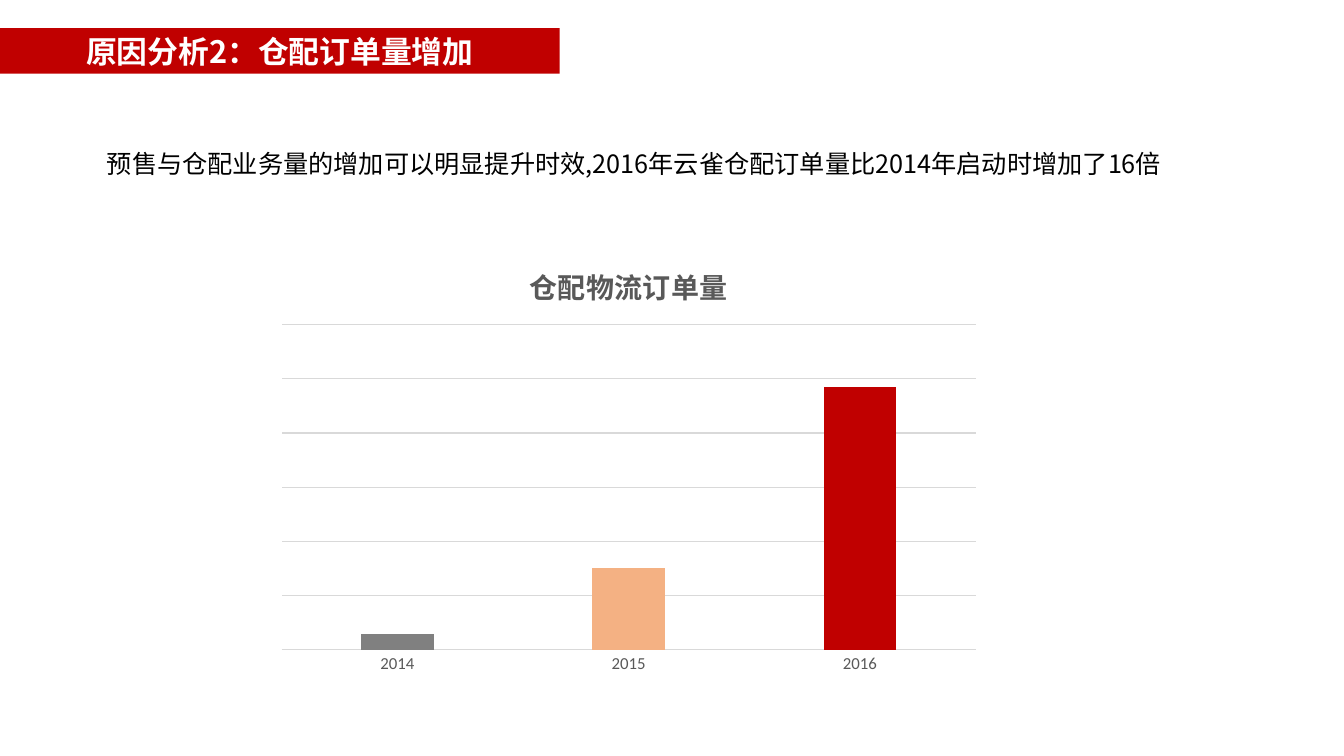
from pptx import Presentation
from pptx.chart.data import CategoryChartData
from pptx.dml.color import RGBColor
from pptx.enum.chart import XL_CHART_TYPE, XL_TICK_MARK
from pptx.enum.shapes import MSO_SHAPE
from pptx.enum.text import MSO_ANCHOR, PP_ALIGN
from pptx.oxml.ns import qn
from pptx.util import Pt

COLUMN = XL_CHART_TYPE.COLUMN_CLUSTERED
NO_TICK = XL_TICK_MARK.NONE
RECT = MSO_SHAPE.RECTANGLE
ROUND_RECT = MSO_SHAPE.ROUNDED_RECTANGLE
MIDDLE = MSO_ANCHOR.MIDDLE
LEFT, CENTER = PP_ALIGN.LEFT, PP_ALIGN.CENTER
PX = 9144


def rgb(value):
    return RGBColor.from_string(value)


class SlideBuilder:
    CJK = "Noto Sans CJK SC"
    LATIN = "Calibri"
    RED = "C00000"
    GRAY = "595959"
    GRID = "D9D9D9"

    def __init__(self, prs):
        self.s = prs.slides.add_slide(prs.slide_layouts[6])

    def box(self, x, y, w, h):
        return [v * PX for v in (x, y, w, h)]

    def font(self, font, size, color, name, bold=False):
        font.size = Pt(size)
        font.bold = bold
        font.name = name
        font.color.rgb = rgb(color)

    def cjk_run(self, r, size, color, bold):
        self.font(r.font, size, color, self.CJK, bold)
        rpr = r.font._element
        ea = rpr.makeelement(qn("a:ea"), {"typeface": self.CJK})
        rpr.find(qn("a:latin")).addnext(ea)

    def line(self, line):
        line.color.rgb = rgb(self.GRID)
        line.width = Pt(0.75)

    def panel(self, kind, box, text, size, color, fill=None, bold=False,
              align=LEFT, inset=10, spacing=1.0):
        sp = self.s.shapes.add_shape(kind, *self.box(*box))
        sp.shadow.inherit = False
        sp.line.fill.background()
        if fill:
            sp.fill.solid()
            sp.fill.fore_color.rgb = rgb(fill)
        else:
            sp.fill.background()
        tf = sp.text_frame
        tf.word_wrap = True
        tf.vertical_anchor = MIDDLE
        tf.margin_left = tf.margin_right = inset * PX
        tf.text = text
        p = tf.paragraphs[0]
        p.alignment = align
        p.line_spacing = spacing
        self.cjk_run(p.runs[0], size, color, bold)
        return sp

    def column_chart(self, box, title, values, colors, top, step):
        data = CategoryChartData()
        data.categories = list(values)
        data.add_series(title, list(values.values()))
        chart = self.s.shapes.add_chart(COLUMN, *self.box(*box), data).chart
        self.font(chart.font, 10, "000000", self.LATIN)
        chart.has_legend = False
        chart.has_title = True
        tf = chart.chart_title.text_frame
        tf.text = title
        self.cjk_run(tf.paragraphs[0].runs[0], 20, self.GRAY, True)
        chart.chart_title.include_in_layout = False

        cat = chart.category_axis
        cat.major_tick_mark = cat.minor_tick_mark = NO_TICK
        self.font(cat.tick_labels.font, 12, self.GRAY, self.LATIN)
        self.line(cat.format.line)

        val = chart.value_axis
        val.visible = False
        val.minimum_scale, val.maximum_scale = 0, top
        val.major_unit = step
        val.has_major_gridlines = True
        self.line(val.major_gridlines.format.line)

        plot = chart.plots[0]
        plot.gap_width = 219
        plot.overlap = -27
        plot.vary_by_categories = False
        series = plot.series[0]
        series.format.fill.solid()
        series.format.fill.fore_color.rgb = rgb("5B9BD5")
        for i, color in enumerate(colors):
            fill = series.points[i].format.fill
            fill.solid()
            fill.fore_color.rgb = rgb(color)


def main():
    prs = Presentation()
    prs.slide_width, prs.slide_height = 1333 * PX, 750 * PX
    b = SlideBuilder(prs)
    b.column_chart((265, 242, 717, 435), "仓配物流订单量",
                   {"2014": 6, "2015": 31, "2016": 100},
                   ["808080", "F4B183", b.RED], top=124, step=20.66)
    b.panel(RECT, (0, 28, 555, 45), "原因分析2：仓配订单量增加",
            22, "FFFFFF", fill=b.RED, bold=True, align=CENTER)
    summary = b.panel(
        ROUND_RECT, (93, 110, 1134, 89),
        "预售与仓配业务量的增加可以明显提升时效,2016年云雀仓配订单量比2014年启动时增加了16倍",
        18, "000000", inset=0, spacing=1.5)
    summary.adjustments[0] = 0.5
    prs.save("out.pptx")


if __name__ == "__main__":
    main()
